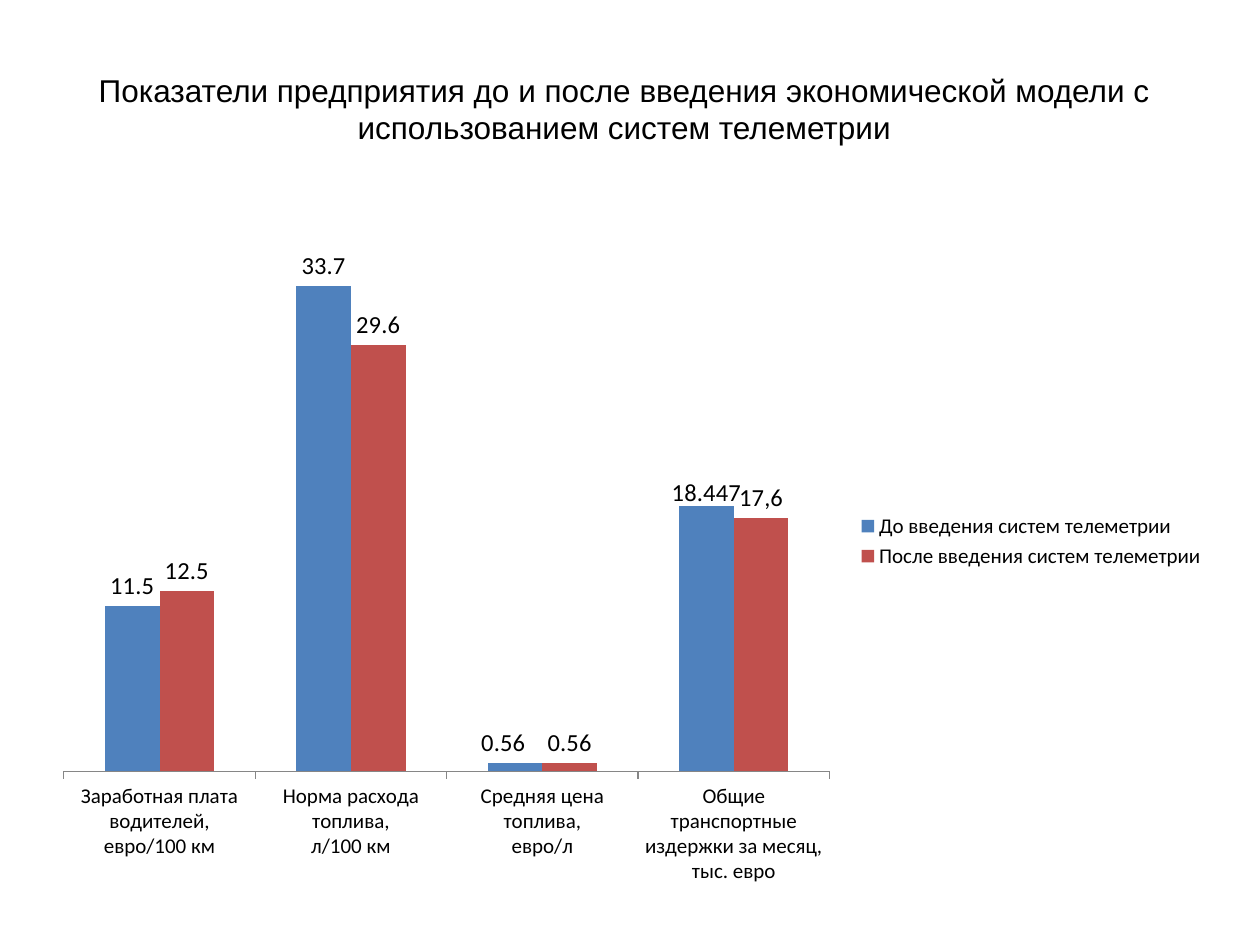
from lxml import etree
from pptx import Presentation
from pptx import util as u
from pptx.chart.data import CategoryChartData
from pptx.dml.color import RGBColor
from pptx.enum import chart as ch, text

TITLE = ("Показатели предприятия до и после введения экономической модели "
         "с использованием систем телеметрии")
CATS = [
    "Заработная плата водителей,\nевро/100 км",
    "Норма расхода топлива,\nл/100 км",
    "Средняя цена топлива,\nевро/л",
    "Общие транспортные издержки за месяц,\nтыс. евро",
]
SERIES = [
    ("До введения систем телеметрии", (11.5, 33.7, 0.56, 18.447), "4F81BD"),
    ("После введения систем телеметрии", (12.5, 29.6, 0.56, 17.6), "C0504D"),
]
SHIFTS = {(0, 2): (-0.01, 0), (0, 3): (0, 0.01)}
OWN = {(1, 3): "17,6"}
THEME = {"head": "Arial", "body": "Calibri", "ink": "000000", "axis": "868686",
         "title": 18, "base": 10, "key": 12, "label": 14}
PLOT = {"x": 0.02, "y": 0.02, "w": 0.65, "h": 0.8}


def style(font, size, face=THEME["body"]):
    font.size, font.name = u.Pt(size), face
    font.color.rgb = RGBColor.from_string(THEME["ink"])


def write(frame, words, size, face=THEME["body"], align=text.PP_ALIGN.CENTER):
    para = frame.paragraphs[0]
    para.alignment = align
    run = para.add_run()
    run.text = words
    style(run.font, size, face)


def place(host, spot, modes=()):
    ns = host.nsmap["c"]
    for old in host.findall(f"{{{ns}}}layout"):
        host.remove(old)
    box = etree.Element(f"{{{ns}}}layout")
    man = etree.SubElement(box, f"{{{ns}}}manualLayout")
    for tag, val in [*modes, *spot.items()]:
        etree.SubElement(man, f"{{{ns}}}{tag}").set("val", str(val))
    return box


def bars(slide):
    data = CategoryChartData()
    data.categories = CATS
    for name, vals, _ in SERIES:
        data.add_series(name, vals)
    chart = slide.shapes.add_chart(
        ch.XL_CHART_TYPE.COLUMN_CLUSTERED, u.Inches(0.32), u.Inches(1.44),
        u.Inches(9.35), u.Inches(5.71), data).chart
    style(chart.font, THEME["base"])
    chart.has_title = False
    chart.has_legend = True
    chart.legend.position = ch.XL_LEGEND_POSITION.RIGHT
    chart.legend.include_in_layout = False
    style(chart.legend.font, THEME["key"])

    cat, val = chart.category_axis, chart.value_axis
    style(cat.tick_labels.font, THEME["key"])
    cat.major_tick_mark = ch.XL_TICK_MARK.OUTSIDE
    cat.format.line.color.rgb = RGBColor.from_string(THEME["axis"])
    val.visible = val.has_major_gridlines = False
    val.minimum_scale, val.maximum_scale = 0, 40

    plot = chart.plots[0]
    plot.gap_width, plot.overlap = 150, 0
    plot.vary_by_categories = False
    for row, (ser, (_, _, hue)) in enumerate(zip(plot.series, SERIES)):
        ser.format.fill.solid()
        ser.format.fill.fore_color.rgb = RGBColor.from_string(hue)
        tags = ser.data_labels
        tags.show_value = True
        tags.position = ch.XL_LABEL_POSITION.OUTSIDE_END
        style(tags.font, THEME["label"])
        for col in range(len(CATS)):
            key = row, col
            if key in OWN:
                tag = ser.points[col].data_label
                write(tag.text_frame, OWN[key], THEME["label"])
                tag.position = ch.XL_LABEL_POSITION.OUTSIDE_END
            if key in SHIFTS:
                tag = ser.points[col].data_label
                style(tag.font, THEME["label"])
                tag.position = ch.XL_LABEL_POSITION.OUTSIDE_END
                node = ser._element.xpath(f"c:dLbls/c:dLbl[c:idx/@val='{col}']")[0]
                node.insert(1, place(node, dict(zip("xy", SHIFTS[key]))))

    area = chart._chartSpace.xpath("c:chart/c:plotArea")[0]
    modes = [("layoutTarget", "inner"), ("xMode", "edge"), ("yMode", "edge")]
    area.insert(0, place(area, PLOT, modes))


def main():
    deck = Presentation()
    deck.slide_width, deck.slide_height = u.Inches(10), u.Inches(7.5)
    slide = deck.slides.add_slide(deck.slide_layouts[5])
    head = slide.shapes.title
    head.left, head.top = u.Inches(0.23), u.Inches(0.51)
    head.width, head.height = u.Inches(9.45), u.Inches(0.71)
    head.text_frame.word_wrap = True
    head.text_frame.vertical_anchor = text.MSO_ANCHOR.TOP
    write(head.text_frame, TITLE, THEME["title"], THEME["head"])
    bars(slide)
    deck.save("out.pptx")


if __name__ == "__main__":
    main()
